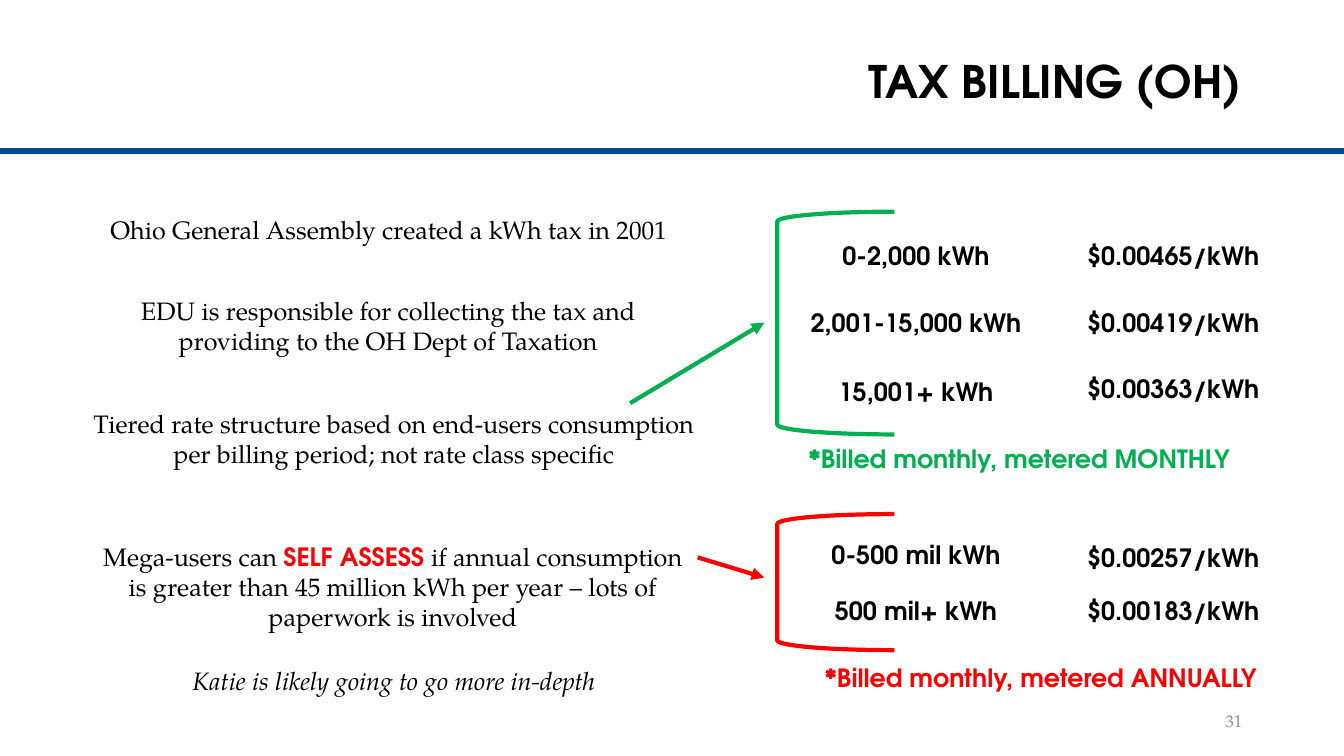
from lxml import etree
from pptx import Presentation
from pptx.dml.color import RGBColor
from pptx.enum import shapes, text
from pptx.oxml import ns
from pptx.util import Inches, Pt

SANS, SERIF = "TeX Gyre Adventor", "TeX Gyre Pagella"
BLACK, GREEN, RED, BLUE, GREY = "000000", "00B050", "FF0000", "004A8B", "8C8C8C"
WIDTH, HEIGHT = 13.33, 7.5
LINE, PADDING = 0.305, 0.1  # height of a text line, vertical room around it

TITLE = "TAX BILLING (OH)"
SLIDE_NUMBER = "31"

# (left, top, width, lines, runs); a run is (words, style)
BODY = {"font": SERIF}
STATEMENTS = [
    (0.69, 2.08, 6.33, 1, [("Ohio General Assembly created a kWh tax in 2001", BODY)]),
    (1.15, 2.88, 5.4, 2, [("EDU is responsible for collecting the tax and "
                           "providing to the OH Dept of Taxation", BODY)]),
    (0.74, 4, 6.33, 2, [("Tiered rate structure based on end-users consumption "
                         "per billing period; not rate class specific", BODY)]),
    (0.87, 5.32, 6.05, 3, [
        ("Mega-users can ", BODY),
        ("SELF ASSESS ", {"font": SANS, "color": RED, "bold": True}),
        ("if annual consumption is greater than 45 million kWh per year – "
         "lots of paperwork is involved", BODY)]),
    (0.74, 6.55, 6.33, 1, [("Katie is likely going to go more in-depth",
                            {"font": SERIF, "italic": True})]),
]

# Tiers are (range, its top, rate, its top); the note is (words, left, top)
RATE_GROUPS = [
    {"color": GREEN, "bracket": (2.1, 2.21), "arrow": (6.25, 4, 7.58, 3.2),
     "tiers": [("0-2,000 kWh", 2.33, "$0.00465/kWh", 2.33),
               ("2,001-15,000 kWh", 3, "$0.00419/kWh", 3),
               ("15,001+ kWh", 3.68, "$0.00363/kWh", 3.65)],
     "note": ("*Billed monthly, metered MONTHLY", 7.92, 4.35)},
    {"color": RED, "bracket": (5.1, 1.35), "arrow": (6.92, 5.53, 7.58, 5.73),
     "tiers": [("0-500 mil kWh", 5.3, "$0.00257/kWh", 5.33),
               ("500 mil+ kWh", 5.86, "$0.00183/kWh", 5.86)],
     "note": ("*Billed monthly, metered ANNUALLY", 8.08, 6.52)},
]
RANGE_COLUMN, RATE_COLUMN = (7.83, 2.51), (10.59, 2.09)
BRACKET_COLUMN = (7.71, 1.16)
NOTE_WIDTH = 4.8


def rgb(color):
    return RGBColor.from_string(color)


def add_run(paragraph, words, font, color=BLACK, size=18, bold=False, italic=False):
    run = paragraph.add_run()
    run.text = words
    run.font.name, run.font.size = font, Pt(size)
    run.font.bold, run.font.italic = bold, italic
    run.font.color.rgb = rgb(color)


def add_text(slide, left, top, width, runs, lines=1, align=text.PP_ALIGN.CENTER):
    height = PADDING + LINE * lines
    box = slide.shapes.add_textbox(*map(Inches, (left, top, width, height)))
    frame = box.text_frame
    frame.word_wrap = True
    paragraph = frame.paragraphs[0]
    paragraph.alignment = align
    for words, style in runs:
        add_run(paragraph, words, **style)
    return frame


def add_title(slide):
    title = slide.shapes.title
    title.left, title.top, title.width, title.height = map(Inches, (1.89, 0.4, 10.53, 0.86))
    title.text_frame.vertical_anchor = text.MSO_ANCHOR.MIDDLE
    paragraph = title.text_frame.paragraphs[0]
    paragraph.alignment = text.PP_ALIGN.RIGHT
    paragraph.line_spacing = 0.9
    add_run(paragraph, TITLE, SANS, size=32, bold=True)


def add_header_rule(slide):
    rule = slide.shapes.add_shape(shapes.MSO_SHAPE.RECTANGLE, 0, Inches(1.47),
                                  Inches(WIDTH), Inches(0.06))
    rule.shadow.inherit = False
    rule.fill.solid()
    rule.fill.fore_color.rgb = rgb(BLUE)
    rule.line.fill.background()


def add_bracket(slide, top, height, color):
    left, width = BRACKET_COLUMN
    bracket = slide.shapes.add_shape(shapes.MSO_SHAPE.LEFT_BRACKET,
                                     *map(Inches, (left, top, width, height)))
    bracket.shadow.inherit = False
    bracket.fill.background()
    bracket.line.color.rgb = rgb(color)
    bracket.line.width = Pt(3)


def add_arrow(slide, ends, color):
    arrow = slide.shapes.add_connector(shapes.MSO_CONNECTOR.STRAIGHT, *map(Inches, ends))
    arrow.line.color.rgb = rgb(color)
    arrow.line.width = Pt(3)
    etree.SubElement(arrow.line._get_or_add_ln(), ns.qn("a:tailEnd"), type="triangle")
    etree.SubElement(arrow._element.spPr, ns.qn("a:effectLst"))


def add_rate_group(slide, group):
    color, label = group["color"], {"font": SANS, "bold": True}
    for usage, usage_top, rate, rate_top in group["tiers"]:
        for words, top, (left, width) in ((usage, usage_top, RANGE_COLUMN),
                                          (rate, rate_top, RATE_COLUMN)):
            add_text(slide, left, top, width, [(words, label)])
    add_bracket(slide, *group["bracket"], color)
    add_arrow(slide, group["arrow"], color)
    words, left, top = group["note"]
    add_text(slide, left, top, NOTE_WIDTH, [(words, {**label, "color": color})],
             align=text.PP_ALIGN.LEFT)


def main():
    presentation = Presentation()
    presentation.slide_width, presentation.slide_height = Inches(WIDTH), Inches(HEIGHT)
    slide = presentation.slides.add_slide(presentation.slide_layouts[5])
    add_header_rule(slide)
    add_title(slide)
    for left, top, width, lines, runs in STATEMENTS:
        add_text(slide, left, top, width, runs, lines)
    for group in RATE_GROUPS:
        add_rate_group(slide, group)
    number = add_text(slide, 9.42, 6.95, 3,
                      [(SLIDE_NUMBER, {"font": SERIF, "color": GREY, "size": 12})],
                      align=text.PP_ALIGN.RIGHT)
    number.vertical_anchor = text.MSO_ANCHOR.MIDDLE
    presentation.save("out.pptx")


if __name__ == "__main__":
    main()
